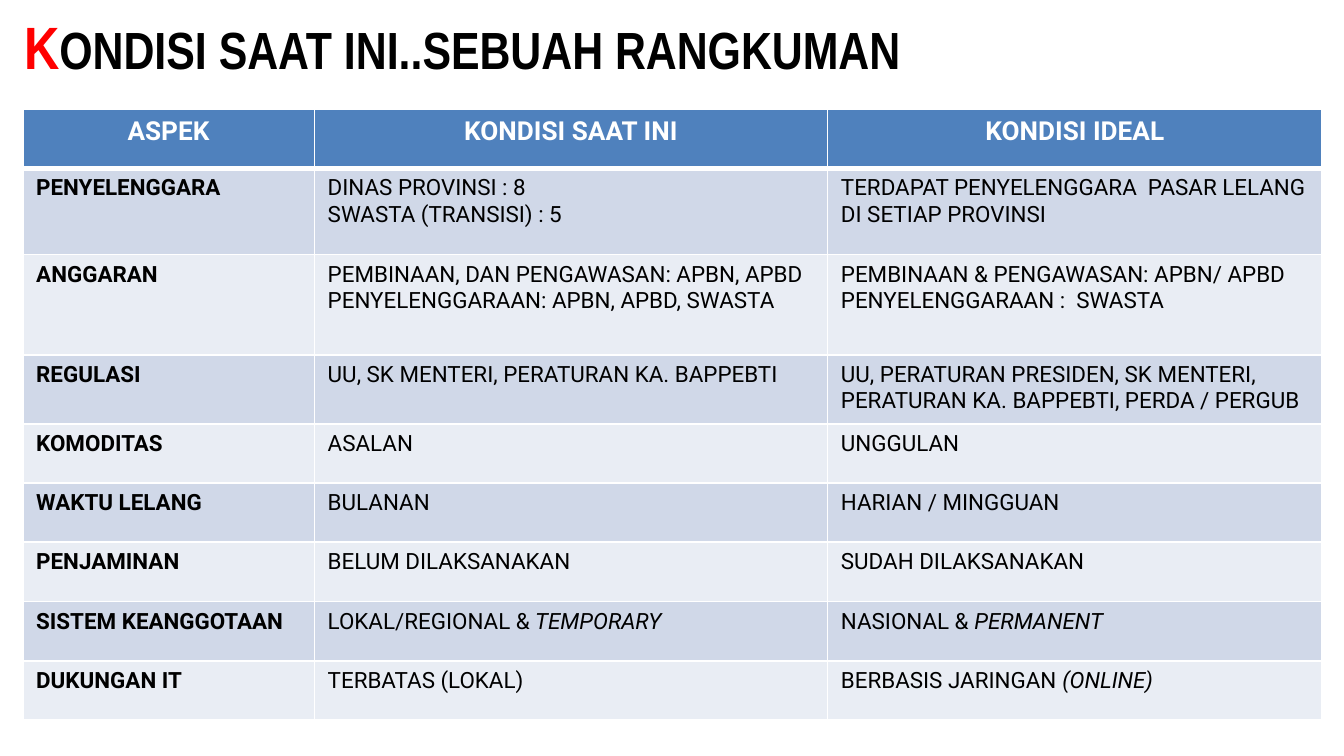
import dataclasses

import lxml.etree
import pptx
import pptx.dml.color
import pptx.enum.text
import pptx.oxml.ns
import pptx.util

Cm = pptx.util.Cm
Pt = pptx.util.Pt
ALIGN = pptx.enum.text.PP_ALIGN


@dataclasses.dataclass(frozen=True)
class Theme:
    head: str = "Arial Narrow"
    body: str = "Roboto"
    ink: str = "000000"
    white: str = "FFFFFF"
    red: str = "FF0000"
    blue: str = "4F81BD"
    bands: tuple = ("D0D8E8", "E9EDF4")
    cap: int = 32
    title: int = 28
    top: int = 14
    text: int = 12
    thin: int = 1
    thick: int = 3


THEME = Theme()
COLS = (5.51, 9.7, 9.35)
ROW = 1.12
TALL = {1: 1.63, 2: 1.9, 3: 1.3}
ROWS = (
    ("ASPEK", "KONDISI SAAT INI", "KONDISI IDEAL"),
    ("PENYELENGGARA", "DINAS PROVINSI : 8\nSWASTA (TRANSISI) : 5",
     "TERDAPAT PENYELENGGARA  PASAR LELANG DI SETIAP PROVINSI"),
    ("ANGGARAN",
     "PEMBINAAN, DAN PENGAWASAN: APBN, APBD\nPENYELENGGARAAN: APBN, APBD, SWASTA",
     "PEMBINAAN & PENGAWASAN: APBN/ APBD\nPENYELENGGARAAN :  SWASTA"),
    ("REGULASI", "UU, SK MENTERI, PERATURAN KA. BAPPEBTI",
     "UU, PERATURAN PRESIDEN, SK MENTERI, PERATURAN KA. BAPPEBTI, PERDA / PERGUB"),
    ("KOMODITAS", "ASALAN", "UNGGULAN"),
    ("WAKTU LELANG", "BULANAN", "HARIAN / MINGGUAN"),
    ("PENJAMINAN", "BELUM DILAKSANAKAN", "SUDAH DILAKSANAKAN"),
    ("SISTEM KEANGGOTAAN", "LOKAL/REGIONAL &* TEMPORARY*", "NASIONAL & *PERMANENT*"),
    ("DUKUNGAN IT", "TERBATAS (LOKAL)", "BERBASIS JARINGAN *(ONLINE)*"),
)


def style(font, face, size, color, bold):
    font.name = face
    font.size = Pt(size)
    font.bold = bold
    font.color.rgb = pptx.dml.color.RGBColor.from_string(color)


def add_title(slide, box):
    shape = slide.shapes.title
    shape.left, shape.top, shape.width, shape.height = map(Cm, box)
    frame = shape.text_frame
    frame.word_wrap = True
    frame.auto_size = pptx.enum.text.MSO_AUTO_SIZE.NONE
    frame.vertical_anchor = pptx.enum.text.MSO_ANCHOR.MIDDLE
    para = frame.paragraphs[0]
    para.alignment = ALIGN.LEFT
    parts = (
        ("K", THEME.cap, THEME.red),
        ("ONDISI SAAT INI..SEBUAH RANGKUMAN", THEME.title, THEME.ink),
    )
    for text, size, color in parts:
        run = para.add_run()
        run.text = text
        style(run.font, THEME.head, size, color, True)


def add_rules(cell, top, base):
    qn = pptx.oxml.ns.qn
    props = cell._tc.get_or_add_tcPr()
    sides = (("L", THEME.thin), ("R", THEME.thin), ("T", top), ("B", base))
    for side, width in sides:
        line = lxml.etree.SubElement(props, qn(f"a:ln{side}"), w=str(Pt(width)))
        fill = lxml.etree.SubElement(line, qn("a:solidFill"))
        lxml.etree.SubElement(fill, qn("a:srgbClr"), val=THEME.white)


def fill_cell(cell, text, row, col):
    head = row == 0
    add_rules(
        cell,
        THEME.thick if row == 1 else THEME.thin,
        THEME.thick if head else THEME.thin,
    )
    shade = THEME.blue if head else THEME.bands[(row - 1) % 2]
    cell.fill.solid()
    cell.fill.fore_color.rgb = pptx.dml.color.RGBColor.from_string(shade)
    frame = cell.text_frame
    for i, line in enumerate(text.split("\n")):
        para = frame.add_paragraph() if i else frame.paragraphs[0]
        para.alignment = ALIGN.CENTER if head else ALIGN.LEFT
        style(
            para.font,
            THEME.body,
            THEME.top if head else THEME.text,
            THEME.white if head else THEME.ink,
            head or col == 0,
        )
        for j, part in enumerate(line.split("*")):
            if part:
                run = para.add_run()
                run.text = part
                if j % 2:
                    run.font.italic = True


def add_grid(slide, box):
    frame = slide.shapes.add_table(len(ROWS), len(COLS), *map(Cm, box))
    table = frame.table
    for col, width in zip(table.columns, COLS):
        col.width = Cm(width)
    for r, texts in enumerate(ROWS):
        table.rows[r].height = Cm(TALL.get(r, ROW))
        for c, text in enumerate(texts):
            fill_cell(table.cell(r, c), text, r, c)


def main():
    deck = pptx.Presentation()
    deck.slide_width = Cm(25.4)
    deck.slide_height = Cm(14.29)
    slide = deck.slides.add_slide(deck.slide_layouts[5])
    add_title(slide, (0.2, 0.05, 25.2, 1.63))
    tall = sum(TALL.get(r, ROW) for r in range(len(ROWS)))
    add_grid(slide, (0.43, 2.06, sum(COLS), tall))
    deck.save("out.pptx")


if __name__ == "__main__":
    main()
